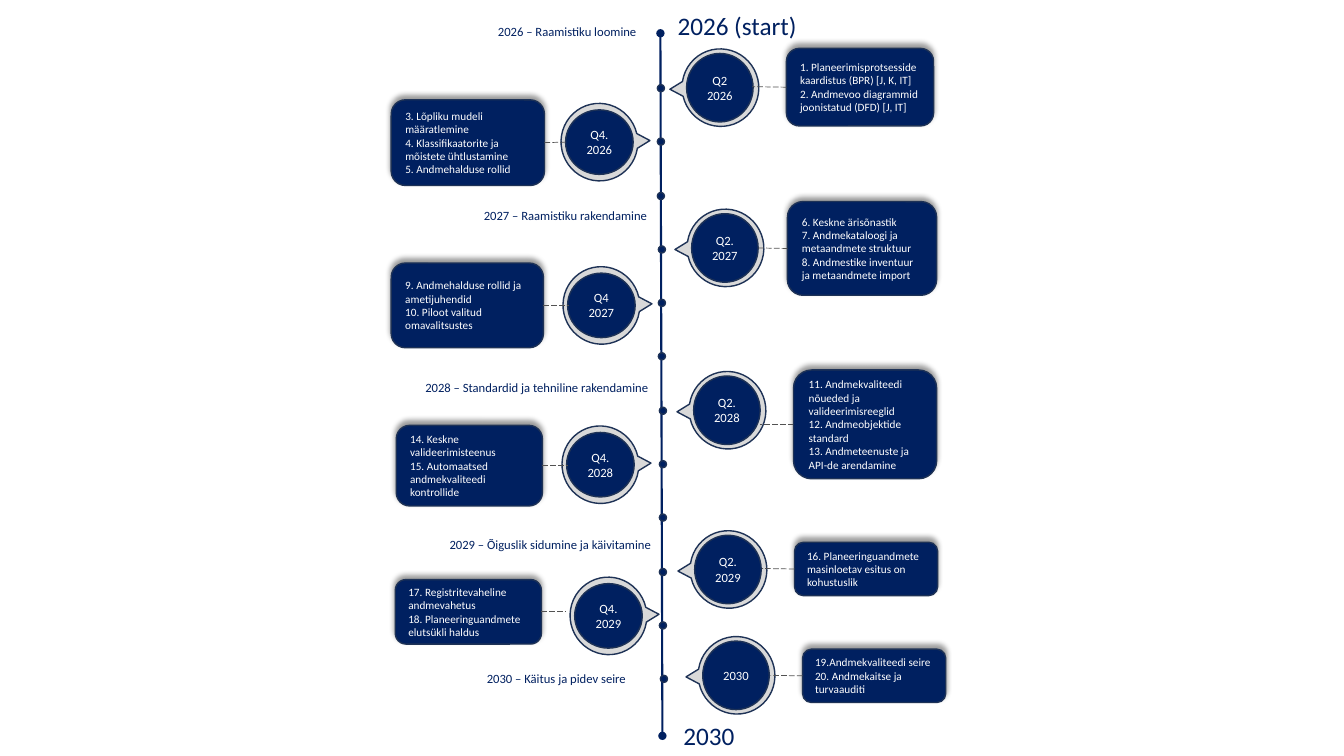
"""Build a vertical roadmap slide running from 2026 to 2030."""
import lxml.etree
import pptx
import pptx.dml.color
import pptx.enum.dml
import pptx.enum.shapes
import pptx.enum.text
import pptx.oxml.ns
import pptx.util

PX = 9144
COLOURS = {"navy": "002060", "outline": "1E3256", "grey": "D9D9D9",
           "dash": "525252", "white": "FFFFFF", "black": "000000"}
SHAPES = pptx.enum.shapes.MSO_SHAPE
ALIGN = pptx.enum.text.PP_ALIGN
ANCHOR = pptx.enum.text.MSO_ANCHOR
FRAME_FORMATS = {
    "label": {"word_wrap": False, "vertical_anchor": ANCHOR.TOP,
              "auto_size": pptx.enum.text.MSO_AUTO_SIZE.SHAPE_TO_FIT_TEXT},
    "shape": {"word_wrap": True, "vertical_anchor": ANCHOR.MIDDLE},
}
DISCS = {"left": (5, 6, 67, 64), "right": (5, 4, 66, 68)}
ROTATIONS = {"left": 249.5, "right": 69.5}

MILESTONES = [
    ("right", (676, 49), ["Q2", "2026"], (780, 48, 146, 77), 746,
     ["1. Planeerimisprotsesside kaardistus (BPR) [J, K, IT]",
      "2. Andmevoo diagrammid joonistatud (DFD) [J, IT]"]),
    ("left", (556, 103), ["Q4.", "2026"], (388, 99, 152, 85), 561,
     ["3. Lõpliku mudeli määratlemine",
      "4. Klassifikaatorite ja mõistete ühtlustamine",
      "5. Andmehalduse rollid"]),
    ("right", (681, 208), ["Q2.", "2027"], (781, 200, 148, 93), 752,
     ["6. Keskne ärisõnastik",
      "7. Andmekataloogi ja metaandmete struktuur",
      "8. Andmestike inventuur ja metaandmete import"]),
    ("left", (558, 265), ["Q4", "2027"], (388, 261, 151, 84), 564,
     ["9. Andmehalduse rollid ja ametijuhendid",
      "10. Piloot valitud omavalitsustes"]),
    ("right", (683, 369), ["Q2.", "2028"], (787, 367, 142, 108), 754,
     ["11. Andmekvaliteedi nõueded ja valideerimisreeglid",
      "12. Andmeobjektide standard",
      "13. Andmeteenuste ja API-de arendamine"]),
    ("left", (557, 423), ["Q4.", "2028"], (393, 422, 145, 80), 563,
     ["14. Keskne valideerimisteenus",
      "15. Automaatsed andmekvaliteedi kontrollide"]),
    ("right", (684, 527), ["Q2.", "2029"], (788, 538, 142, 53), 756,
     ["16. Planeeringuandmete masinloetav esitus on kohustuslik"]),
    ("left", (565, 573), ["Q4.", "2029"], (392, 575, 145, 64), 561,
     ["17. Registritevaheline andmevahetus",
      "18. Planeeringuandmete elutsükli haldus"]),
    ("right", (692, 632), ["2030"], (796, 644, 142, 53), 764,
     ["19.Andmekvaliteedi seire",
      "20. Andmekaitse ja turvaauditi"]),
]
PHASES = [
    ((484, 19, 159, 25), "2026 – Raamistiku loomine"),
    ((470, 201, 184, 25), "2027 – Raamistiku rakendamine"),
    ((412, 372, 244, 25), "2028 – Standardid ja tehniline rakendamine"),
    ((436, 528, 222, 25), "2029 – Õiguslik sidumine ja käivitamine"),
    ((473, 661, 159, 25), "2030 – Käitus ja pidev seire"),
]


def emu(*lengths):
    """Turn px lengths into EMU."""
    return [pptx.util.Emu(length * PX) for length in lengths]


def rgb(name):
    """Return a named colour."""
    return pptx.dml.color.RGBColor.from_string(COLOURS[name])


def apply(target, formats):
    """Set each attribute named in formats on target."""
    for name, value in formats.items():
        setattr(target, name, value)


def add_xml(parent, tag, **attributes):
    """Append a DrawingML element to parent."""
    return lxml.etree.SubElement(parent, pptx.oxml.ns.qn(f"a:{tag}"), attributes)


def write(shape, lines, kind, size, colour, alignment=ALIGN.LEFT):
    """Write lines as formatted paragraphs."""
    frame = shape.text_frame
    frame.text = "\n".join(lines)
    apply(frame, FRAME_FORMATS[kind])
    for paragraph in frame.paragraphs:
        paragraph.alignment = alignment
        apply(paragraph.font, {"name": "Calibri", "size": pptx.util.Pt(size)})
        paragraph.font.color.rgb = rgb(colour)


def add_shape(slide, preset, bounds, fill="navy"):
    """Add a flat outlined shape."""
    shape = slide.shapes.add_shape(preset, *emu(*bounds))
    shape.shadow.inherit = False
    shape.fill.solid()
    shape.fill.fore_color.rgb = rgb(fill)
    shape.line.color.rgb = rgb("outline")
    shape.line.width = pptx.util.Pt(1)
    return shape


def add_line(slide, ends, colour, width):
    """Add a straight connector without shadow."""
    line = slide.shapes.add_connector(
        pptx.enum.shapes.MSO_CONNECTOR.STRAIGHT, *emu(*ends))
    line.line.color.rgb = rgb(colour)
    line.line.width = pptx.util.Pt(width)
    add_xml(line._element.spPr, "effectLst")
    return line


def add_label(slide, bounds, text, size):
    """Add an unwrapped navy text label."""
    label = slide.shapes.add_textbox(*emu(*bounds))
    write(label, [text], "label", size, "navy")


def add_title(slide, bounds, text):
    """Place and format the title placeholder."""
    title = slide.shapes.title
    apply(title, dict(zip(("left", "top", "width", "height"), emu(*bounds))))
    write(title, [text], "label", 18, "navy")


def add_axis(slide):
    """Add the time axis with its evenly spaced dots."""
    axis = add_line(slide, (655, 33, 657, 730), "navy", 1.5)
    for tag in ("headEnd", "tailEnd"):
        add_xml(axis.line._get_or_add_ln(), tag, type="oval")
    for index in range(12):
        left, top = 652 + round(index / 4), 84 + round(index * 53.3)
        add_shape(slide, SHAPES.OVAL, (left, top, 7, 7))


def add_task_box(slide, bounds, tasks):
    """Add a rounded task box with a shadow cast upwards."""
    box = add_shape(slide, SHAPES.ROUNDED_RECTANGLE, bounds)
    effects = box._element.spPr.find(pptx.oxml.ns.qn("a:effectLst"))
    shadow = add_xml(effects, "outerShdw", blurRad="50800", dist="38100",
                     dir="16200000", algn="b", rotWithShape="0")
    colour = add_xml(shadow, "srgbClr", val=COLOURS["black"])
    add_xml(colour, "alpha", val="40000")
    write(box, tasks, "shape", 8, "white")
    return box


def add_milestone(slide, side, corner, date, bounds, link_end, tasks):
    """Add a dated marker with its linked task box."""
    left, top = corner
    callout = add_shape(slide, SHAPES.OVAL_CALLOUT, (left, top, 77, 76), "grey")
    callout.rotation = ROTATIONS[side]
    offset_x, offset_y, width, height = DISCS[side]
    disc = add_shape(slide, SHAPES.OVAL,
                     (left + offset_x, top + offset_y, width, height))
    write(disc, date, "shape", 9, "white", ALIGN.CENTER)
    box = add_task_box(slide, bounds, tasks)
    middle = bounds[1] + bounds[3] // 2
    box_edge = bounds[0] + (bounds[2] if side == "left" else 0)
    link = add_line(slide, (box_edge, middle, link_end, middle), "dash", 0.5)
    link.line.dash_style = pptx.enum.dml.MSO_LINE.LONG_DASH
    link.begin_connect(box, 3 if side == "left" else 1)


def main():
    """Build and save the slide."""
    presentation = pptx.Presentation()
    presentation.slide_width, presentation.slide_height = emu(1333, 750)
    slide = presentation.slides.add_slide(presentation.slide_layouts[5])
    add_title(slide, (662, 5, 140, 40), "2026 (start)")
    add_axis(slide)
    for milestone in MILESTONES:
        add_milestone(slide, *milestone)
    for bounds, text in PHASES:
        add_label(slide, bounds, text, 9)
    add_label(slide, (668, 710, 71, 40), "2030", 18)
    presentation.save("out.pptx")


if __name__ == "__main__":
    main()
